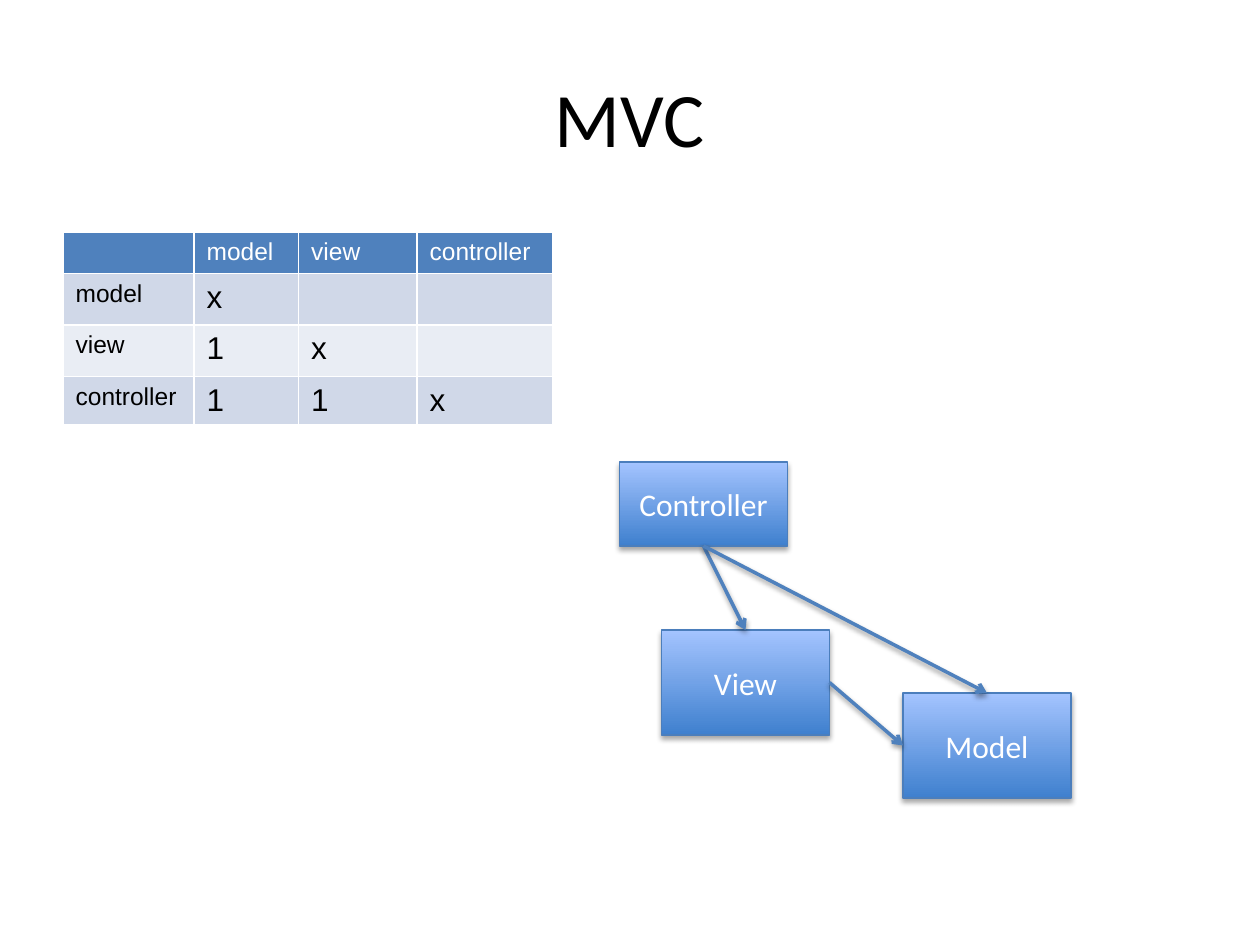
from lxml.etree import SubElement
from pptx import Presentation
from pptx.dml.color import RGBColor
from pptx.enum.shapes import MSO_CONNECTOR as Connector, MSO_SHAPE as Shape
from pptx.enum.text import MSO_ANCHOR as Anchor, PP_ALIGN as Align
from pptx.oxml.ns import qn
from pptx.util import Inches, Pt

COLORS = {
    "black": "000000", "white": "FFFFFF", "header": "4F81BD",
    "band_dark": "D0D8E8", "band_light": "E9EDF4",
    "box_bottom": "3F80CE", "box_top": "A4C4FF",
    "box_line": "4B7EBC", "arrow": "4F81BD",
}
UNITS_PER_INCH = 12
TOP, LEFT, BOTTOM, RIGHT = range(4)

COLUMN_WIDTHS = [1.04, 0.83, 0.94, 1.08]
ROW_HEIGHTS = [0.33, 0.41, 0.41, 0.38]
DEPENDENCIES = [
    ["", "model", "view", "controller"],
    ["model", "x", "", ""],
    ["view", "1", "x", ""],
    ["controller", "1", "1", "x"],
]
BOXES = {
    "Controller": (59, 44, 16, 8),
    "Model": (86, 66, 16, 10),
    "View": (63, 60, 16, 10),
}
ARROWS = [
    ("Controller", BOTTOM, "View", TOP),
    ("Controller", BOTTOM, "Model", TOP),
    ("View", RIGHT, "Model", LEFT),
]


def color(name):
    return RGBColor.from_string(COLORS[name])


def grid(units):
    return Inches(units / UNITS_PER_INCH)


def write(frame, text, size, font_name, color_name, align):
    para = frame.paragraphs[0]
    para.text = text
    para.alignment = align
    font = para.font
    font.name, font.size, font.bold = font_name, Pt(size), False
    font.color.rgb = color(color_name)


def add_shadow(item, distance, opacity):
    effects = item._element.spPr.find(qn("a:effectLst"))
    if effects is None:
        effects = SubElement(item._element.spPr, qn("a:effectLst"))
    shadow = SubElement(effects, qn("a:outerShdw"), blurRad=str(Pt(3.1)),
                        dist=str(Pt(distance)), dir="5400000", rotWithShape="0")
    tint = SubElement(shadow, qn("a:srgbClr"), val=COLORS["black"])
    SubElement(tint, qn("a:alpha"), val=str(opacity * 1000))


def add_title(slide, text):
    title = slide.shapes.title
    title.left, title.top = Inches(0.5), Inches(0.3)
    title.width, title.height = Inches(9), Inches(1.25)
    title.text_frame.vertical_anchor = Anchor.MIDDLE
    write(title.text_frame, text, 44, "Calibri", "black", Align.CENTER)


def add_dependency_table(slide):
    table = slide.shapes.add_table(
        len(ROW_HEIGHTS), len(COLUMN_WIDTHS), Inches(0.5), Inches(1.84),
        Inches(sum(COLUMN_WIDTHS)), Inches(sum(ROW_HEIGHTS))).table
    for column, width in zip(table.columns, COLUMN_WIDTHS):
        column.width = Inches(width)
    for row, height in zip(table.rows, ROW_HEIGHTS):
        row.height = Inches(height)
    for r, words in enumerate(DEPENDENCIES):
        band = "header" if r == 0 else "band_dark" if r % 2 else "band_light"
        for c, word in enumerate(words):
            cell = table.cell(r, c)
            cell.fill.solid()
            cell.fill.fore_color.rgb = color(band)
            write(cell.text_frame, word, 18 if r and c else 14, "Arial",
                  "black" if r else "white", Align.LEFT)


def add_box(slide, name):
    box = slide.shapes.add_shape(Shape.RECTANGLE, *map(grid, BOXES[name]))
    box.fill.gradient()
    box.fill.gradient_angle = 90
    for stop, shade in zip(box.fill.gradient_stops, ("box_bottom", "box_top")):
        stop.color.rgb = color(shade)
    box.line.color.rgb = color("box_line")
    box.line.width = Pt(0.75)
    box.shadow.inherit = False
    add_shadow(box, 1.8, 35)
    box.text_frame.vertical_anchor = Anchor.MIDDLE
    write(box.text_frame, name, 18, "Calibri", "white", Align.CENTER)
    return box


def add_arrow(slide, start, start_side, end, end_side):
    arrow = slide.shapes.add_connector(Connector.STRAIGHT, 0, 0, 0, 0)
    arrow.begin_connect(start, start_side)
    arrow.end_connect(end, end_side)
    arrow.line.color.rgb = color("arrow")
    arrow.line.width = Pt(2)
    SubElement(arrow.line._get_or_add_ln(), qn("a:tailEnd"), type="arrow")
    add_shadow(arrow, 1.6, 38)


def main():
    deck = Presentation()
    deck.slide_width, deck.slide_height = Inches(10), Inches(7.5)
    slide = deck.slides.add_slide(deck.slide_layouts[5])
    add_title(slide, "MVC")
    add_dependency_table(slide)
    boxes = {name: add_box(slide, name) for name in BOXES}
    for start, start_side, end, end_side in ARROWS:
        add_arrow(slide, boxes[start], start_side, boxes[end], end_side)
    deck.save("out.pptx")


if __name__ == "__main__":
    main()
